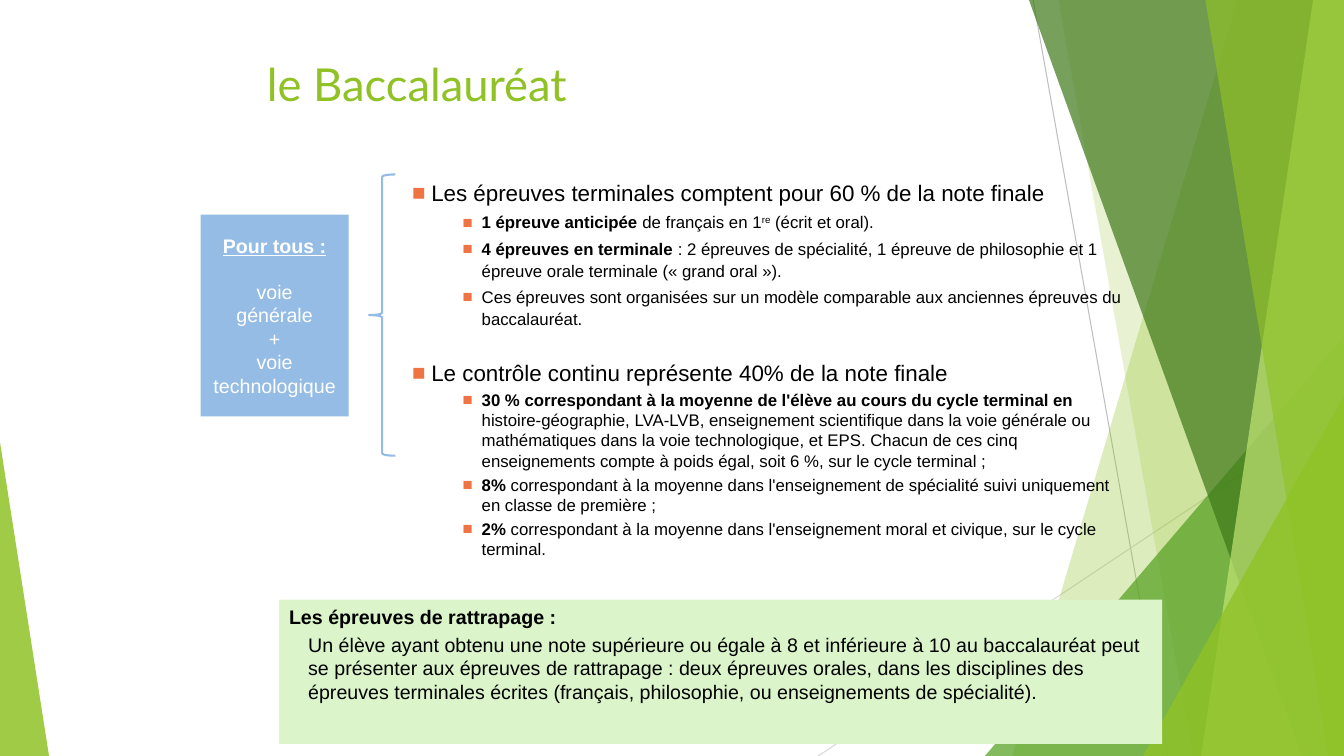
"""Build the slide on how the Baccalauréat is assessed."""
import lxml.etree
import pptx
import pptx.dml.color
import pptx.enum.shapes
import pptx.enum.text
import pptx.oxml.ns
import pptx.util

Pt = pptx.util.Pt
qn = pptx.oxml.ns.qn
SHAPE = pptx.enum.shapes.MSO_SHAPE
ANCHOR = pptx.enum.text.MSO_ANCHOR
ALIGN = pptx.enum.text.PP_ALIGN


def paint(fill, colour, opacity=100):
    fill.solid()
    fill.fore_color.rgb = pptx.dml.color.RGBColor.from_string(colour)
    if opacity < 100:
        srgb = fill._xPr.find(".//" + qn("a:srgbClr"))
        lxml.etree.SubElement(srgb, qn("a:alpha"), val=str(opacity * 1000))


def write(paragraph, runs, size, colour="000000", font="Arial"):
    for text, style in runs:
        run = paragraph.add_run()
        run.text = text
        run.font.name = font
        run.font.size = Pt(size)
        run.font.bold = "bold" in style
        run.font.underline = "underline" in style
        paint(run.font.fill, colour)
        if "superscript" in style:
            run._r.get_or_add_rPr().set("baseline", "30000")


presentation = pptx.Presentation()
presentation.slide_width = Pt(960)
presentation.slide_height = Pt(540)
slide = presentation.slides.add_slide(presentation.slide_layouts[6])
shapes = slide.shapes

for x1, y1, x2, y2, colour in [(738, 0, 834, 540, "BFBFBF"), (960, 290, 584.5, 540, "D9D9D9")]:
    ray = shapes.add_connector(
        pptx.enum.shapes.MSO_CONNECTOR.STRAIGHT, Pt(x1), Pt(y1), Pt(x2), Pt(y2))
    paint(ray.line.fill, colour)
    ray.line.width = Pt(0.75)
    lxml.etree.SubElement(ray._element.spPr, qn("a:effectLst"))

facets = [
    ("pane", (884, 723), "90C226", 30),
    ("pane", (756, 852), "90C226", 20),
    ("triangle", (703.5, 240, 256.5, 1), "54A021", 72),
    ("pane", (735, 930), "3F7819", 70),
    ("pane", (938, 858), "C0E474", 70),
    ("pane", (861, 949), "90C226", 65),
    ("triangle", (816.5, 283, 143.5, 1), "90C226", 80),
    ("triangle", (0, 316, 35, 0), "90C226", 85),
]
for kind, geometry, colour, opacity in facets:
    if kind == "pane":
        top_x, bottom_x = geometry
        outline = shapes.build_freeform(top_x, 0, scale=Pt(1))
        outline.add_line_segments([(960, 0), (960, 540), (bottom_x, 540)], close=True)
        facet = outline.convert_to_shape()
    else:
        left, top, width, apex = geometry
        facet = shapes.add_shape(
            SHAPE.ISOSCELES_TRIANGLE, Pt(left), Pt(top), Pt(width), Pt(540 - top))
        facet.adjustments[0] = apex
    facet.shadow.inherit = False
    facet.line.fill.background()
    paint(facet.fill, colour, opacity)

title = shapes.add_textbox(Pt(183.6), Pt(36.7), Pt(620.6), Pt(44.6)).text_frame
title.word_wrap = True
write(title.paragraphs[0], [("le Baccalauréat", "")], 32.4, "90C226", "Lato")

audience = shapes.add_shape(SHAPE.RECTANGLE, Pt(143.3), Pt(153.4), Pt(105.8), Pt(144))
retake = shapes.add_shape(SHAPE.RECTANGLE, Pt(199.4), Pt(428.4), Pt(630.7), Pt(103))
for panel, colour in [(audience, "95BCE5"), (retake, "DBF4CA")]:
    panel.shadow.inherit = False
    panel.line.fill.background()
    paint(panel.fill, colour)
    panel.text_frame.word_wrap = True

audience.text_frame.vertical_anchor = ANCHOR.MIDDLE
audience_lines = [
    ("Pour tous :", "bold underline", 0),
    ("voie", "", 16.1),
    ("générale", "", 0),
    ("+", "", 0),
    ("voie technologique", "", 0),
]
for index, (text, style, gap) in enumerate(audience_lines):
    line = audience.text_frame.add_paragraph() if index else audience.text_frame.paragraphs[0]
    line.alignment = ALIGN.CENTER
    line.space_before = Pt(gap)
    write(line, [(text, style)], 14, "FFFFFF")

brace = shapes.add_shape(SHAPE.LEFT_BRACE, Pt(263.5), Pt(124.6), Pt(18.9), Pt(200.9))
brace.shadow.inherit = False
brace.fill.background()
paint(brace.line.fill, "95BCE5")
brace.line.width = Pt(1.5)

exams = shapes.add_textbox(Pt(287.3), Pt(124.6), Pt(527), Pt(317.5)).text_frame
exams.word_wrap = True
sections = [
    ("Les épreuves terminales comptent pour 60 % de la note finale", 0, 1.1, [
        [("1 épreuve anticipée ", "bold"), ("de français en 1", ""),
         ("re", "superscript"), (" (écrit et oral).", "")],
        [("4 épreuves en terminale", "bold"),
         (" : 2 épreuves de spécialité, 1 épreuve de philosophie et 1 épreuve orale "
          "terminale (« grand oral »).", "")],
        [("Ces épreuves sont organisées sur un modèle comparable aux anciennes épreuves "
          "du baccalauréat.", "")],
    ]),
    ("Le contrôle continu représente 40% de la note finale", 21.6, 1, [
        [("30 % correspondant à la moyenne de l'élève au cours du cycle terminal en ", "bold"),
         ("histoire-géographie, LVA-LVB, enseignement scientifique dans la voie générale ou "
          "mathématiques dans la voie technologique, et EPS. Chacun de ces cinq "
          "enseignements compte à poids égal, soit 6 %, sur le cycle terminal ;", "")],
        [("8%", "bold"),
         (" correspondant à la moyenne dans l'enseignement de spécialité suivi uniquement "
          "en classe de première ;", "")],
        [("2%", "bold"),
         (" correspondant à la moyenne dans l'enseignement moral et civique, sur le cycle "
          "terminal.", "")],
    ]),
]
for number, (heading, heading_gap, spacing, details) in enumerate(sections):
    entries = [([(heading, "")], 0, 16, 1, heading_gap)]
    entries += [(runs, 1, 12, spacing, 2.8) for runs in details]
    for runs, level, size, line_spacing, gap in entries:
        first = number == 0 and level == 0
        entry = exams.paragraphs[0] if first else exams.add_paragraph()
        entry.level = level
        entry.line_spacing = line_spacing
        entry.space_before = Pt(gap)
        properties = entry._p.get_or_add_pPr()
        properties.set("marL", str(Pt(13.7 + 36 * level)))
        properties.set("indent", str(Pt(-13.7)))
        bullet_colour = lxml.etree.SubElement(properties, qn("a:buClr"))
        lxml.etree.SubElement(bullet_colour, qn("a:srgbClr"), val="EE7444")
        lxml.etree.SubElement(properties, qn("a:buFont"), typeface="Arial")
        lxml.etree.SubElement(properties, qn("a:buChar"), char="■")
        write(entry, runs, size)

retake.text_frame.vertical_anchor = ANCHOR.TOP
retake_heading = retake.text_frame.paragraphs[0]
retake_heading.alignment = ALIGN.LEFT
write(retake_heading, [("Les épreuves de rattrapage :", "bold")], 14)
retake_rule = retake.text_frame.add_paragraph()
retake_rule.alignment = ALIGN.LEFT
retake_rule.level = 1
retake_rule.space_before = Pt(3.2)
retake_rule._p.get_or_add_pPr().set("marL", str(Pt(13.7)))
retake_rule._p.get_or_add_pPr().set("indent", "0")
write(retake_rule, [(
    "Un élève ayant obtenu une note supérieure ou égale à 8 et inférieure à 10 au "
    "baccalauréat peut se présenter aux épreuves de rattrapage : deux épreuves orales, dans "
    "les disciplines des épreuves terminales écrites (français, philosophie, ou "
    "enseignements de spécialité).", "")], 14)

presentation.save("out.pptx")
